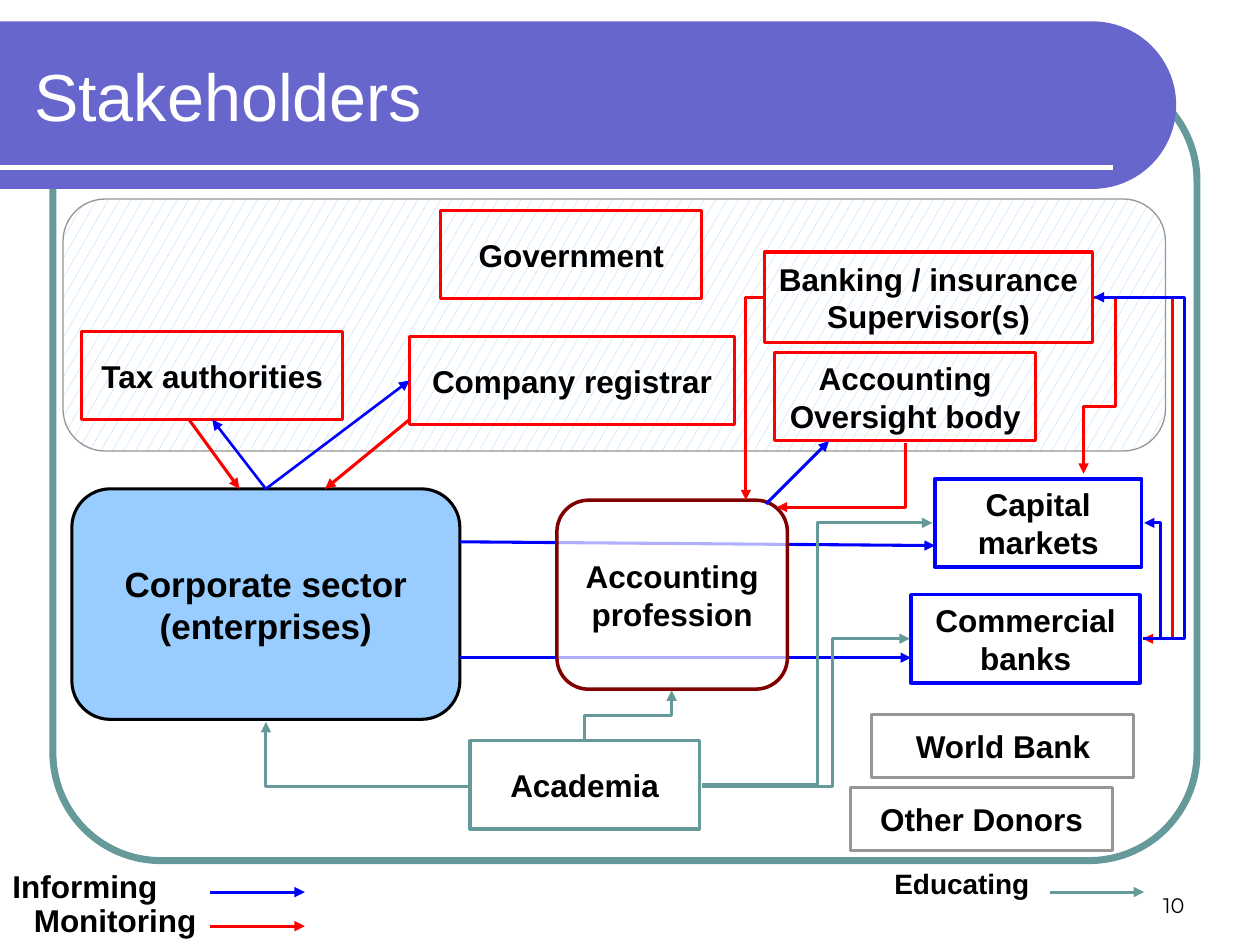
"""Build the stakeholder map slide with its informing, monitoring and educating flows."""
import math
from dataclasses import dataclass

from lxml import etree
from pptx import Presentation
from pptx import util as u
from pptx.dml.color import RGBColor
from pptx.enum import dml, shapes, text
from pptx.oxml.ns import qn

BLACK, WHITE, GREY = "000000", "FFFFFF", "969696"
PURPLE, SKY, MAROON = "6666CC", "99CCFF", "800000"
INFORM, MONITOR, EDUCATE = "0000FF", "FF0000", "669999"
RECT = shapes.MSO_SHAPE.RECTANGLE
ROUNDED = shapes.MSO_SHAPE.ROUNDED_RECTANGLE
LEFT, CENTER, RIGHT = text.PP_ALIGN.LEFT, text.PP_ALIGN.CENTER, text.PP_ALIGN.RIGHT
TOP, MIDDLE, BOTTOM = text.MSO_ANCHOR.TOP, text.MSO_ANCHOR.MIDDLE, text.MSO_ANCHOR.BOTTOM


@dataclass
class Box:
    words: str
    left: float
    top: float
    width: float
    height: float
    line: str
    weight: float = 1.75
    fill: str = ""
    size: int = 18
    preset: int = RECT
    corner: float = 0.167


@dataclass
class Flow:
    color: str
    start: tuple
    end: tuple
    weight: float = 1.75
    source: tuple = ()
    target: tuple = ()


@dataclass
class Elbow:
    color: str
    left: float
    top: float
    width: float
    height: float
    bends: int
    turn: int = 0
    flip: str = ""
    adjust: tuple = ()


@dataclass
class Label:
    words: str
    left: float
    top: float
    width: float
    height: float
    size: int = 18


def rgb(value: str) -> RGBColor:
    return RGBColor.from_string(value)


def write(frame, words: str, size: int, color: str = BLACK, bold: bool = True,
          face: str = "Arial", align=CENTER, anchor=MIDDLE, wrap: bool = False) -> None:
    frame.text = words
    frame.word_wrap = wrap
    frame.vertical_anchor = anchor
    for paragraph in frame.paragraphs:
        paragraph.alignment = align
        for name, value in {"size": u.Pt(size), "bold": bold, "name": face}.items():
            setattr(paragraph.font, name, value)
        paragraph.font.color.rgb = rgb(color)


def draw_box(canvas, box: Box):
    shape = canvas.add_shape(box.preset, *map(u.Inches, (box.left, box.top, box.width, box.height)))
    shape.shadow.inherit = False
    if box.preset == ROUNDED:
        shape.adjustments[0] = box.corner
    if box.fill:
        shape.fill.solid()
        shape.fill.fore_color.rgb = rgb(box.fill)
    else:
        shape.fill.background()
    shape.line.color.rgb = rgb(box.line)
    shape.line.width = u.Pt(box.weight)
    if box.words:
        write(shape.text_frame, box.words, box.size)
    return shape


def draw_connector(canvas, kind, start: tuple, end: tuple, color: str, weight: float, arrow: bool = True):
    connector = canvas.add_connector(kind, *map(u.Inches, (*start, *end)))
    connector.line.color.rgb = rgb(color)
    connector.line.width = u.Pt(weight)
    if arrow:
        etree.SubElement(connector.line._get_or_add_ln(), qn("a:tailEnd"), type="triangle")
    etree.SubElement(connector._element.spPr, qn("a:effectLst"))
    return connector


def draw_flow(canvas, flow: Flow, boxes: dict) -> None:
    connector = draw_connector(canvas, shapes.MSO_CONNECTOR.STRAIGHT, flow.start, flow.end,
                               flow.color, flow.weight)
    for join, site in ((connector.begin_connect, flow.source), (connector.end_connect, flow.target)):
        if site:
            join(boxes[site[0]], site[1])


def draw_elbow(canvas, elbow: Elbow) -> None:
    end = (elbow.left + elbow.width, elbow.top + elbow.height)
    connector = draw_connector(canvas, shapes.MSO_CONNECTOR.ELBOW, (elbow.left, elbow.top), end,
                               elbow.color, 1.75)
    frame = connector._element.spPr.find(qn("a:xfrm"))
    frame.set("rot", str(elbow.turn * 60000))
    for axis in elbow.flip:
        frame.set("flip" + axis, "1")
    geometry = connector._element.spPr.find(qn("a:prstGeom"))
    geometry.set("prst", f"bentConnector{elbow.bends}")
    for number, share in enumerate(elbow.adjust, 1):
        etree.SubElement(geometry.find(qn("a:avLst")), qn("a:gd"),
                         name=f"adj{number}", fmla=f"val {round(share * 100000)}")


def draw_label(canvas, label: Label, **style):
    field = canvas.add_textbox(*map(u.Inches, (label.left, label.top, label.width, label.height)))
    write(field.text_frame, label.words, label.size, **style)


def draw_banner(canvas) -> None:
    radius, middle, center = 0.665, 0.835, 8.67
    angles = [math.radians(degree) for degree in range(-90, 91, 3)]
    arc = [(u.Inches(center + radius * math.cos(a)), u.Inches(middle + radius * math.sin(a))) for a in angles]
    builder = canvas.build_freeform(0, u.Inches(middle - radius))
    builder.add_line_segments([*arc, (0, u.Inches(middle + radius))], close=True)
    banner = builder.convert_to_shape()
    banner.shadow.inherit = False
    banner.fill.solid()
    banner.fill.fore_color.rgb = rgb(PURPLE)
    banner.line.fill.background()
    draw_connector(canvas, shapes.MSO_CONNECTOR.STRAIGHT, (0, 1.33), (8.83, 1.33), WHITE, 3, arrow=False)


def draw_title(slide) -> None:
    title = slide.shapes.title
    for name, value in {"left": 0.17, "top": 0.25, "width": 8.77, "height": 1}.items():
        setattr(title, name, u.Inches(value))
    write(title.text_frame, "Stakeholders", 38, WHITE, bold=False, align=LEFT, wrap=True)
    slide.shapes._spTree.append(title._element)


FRAME = Box("", 0.42, 0.58, 9.08, 6.25, EDUCATE, 4, preset=ROUNDED, corner=0.137)
STATE = Box("", 0.5, 1.58, 8.75, 2, GREY, 0.75, preset=ROUNDED)
SECTORS = [
    Box("Government", 3.5, 1.67, 2.07, 0.7, MONITOR),
    Box("Tax authorities", 0.65, 2.63, 2.07, 0.7, MONITOR),
    Box("Company registrar", 3.25, 2.67, 2.58, 0.7, MONITOR),
    Box("Banking / insurance\nSupervisor(s)", 6.07, 2, 2.6, 0.72, MONITOR),
    Box("Commercial\nbanks", 7.23, 4.72, 1.82, 0.7, INFORM, 2),
    Box("Capital\nmarkets", 7.42, 3.8, 1.64, 0.7, INFORM, 2),
    Box("World Bank", 6.92, 5.67, 2.08, 0.5, GREY),
    Box("Other Donors", 6.75, 6.25, 2.08, 0.5, GREY),
    Box("Accounting\nOversight body", 6.15, 2.8, 2.07, 0.7, MONITOR),
    Box("Corporate sector\n(enterprises)", 0.57, 3.88, 3.08, 1.83, BLACK, fill=SKY, size=20, preset=ROUNDED),
]
PROFESSION = Box("Accounting\nprofession", 4.42, 3.97, 1.83, 1.5, MAROON, 2, WHITE, preset=ROUNDED)
ACADEMIA = Box("Academia", 3.73, 5.88, 1.82, 0.7, EDUCATE)
REPORTS = [Flow(INFORM, (3.65, 4.3), (7.42, 4.33)), Flow(INFORM, (3.65, 5.22), (7.23, 5.22))]
CORPORATE_TOP = ("Corporate sector\n(enterprises)", 0)
FLOWS = [
    Flow(INFORM, (2.11, 3.88), (1.69, 3.33), 1.5, CORPORATE_TOP, ("Tax authorities", 2)),
    Flow(INFORM, (2.11, 3.88), (3.25, 3.02), 1.5, CORPORATE_TOP, ("Company registrar", 1)),
    Flow(MONITOR, (3.25, 3.33), (2.58, 3.88)),
    Flow(MONITOR, (1.5, 3.33), (1.9, 3.88)),
    Flow(INFORM, (6.08, 4), (6.58, 3.5)),
]
ELBOWS = [
    Elbow(EDUCATE, 2.11, 5.73, 1.61, 0.51, 2, 180),
    Elbow(EDUCATE, 4.79, 5.33, 0.39, 0.69, 3, 270, adjust=(0.5,)),
    Elbow(EDUCATE, 5.57, 5.07, 1.65, 1.17, 3, flip="V", adjust=(0.63,)),
    Elbow(MONITOR, 6.42, 3.26, 0.51, 1.02, 2, 90),
    Elbow(MONITOR, 8.68, 2.36, 0.39, 2.71, 3, adjust=(1.6,)),
    Elbow(MONITOR, 5.92, 2.36, 0.14, 1.61, 2, 180, "V"),
    Elbow(MONITOR, 8.6, 2.36, 0.08, 1.4, 4, flip="H", adjust=(-2.15, 0.62)),
    Elbow(INFORM, 8.68, 2.36, 0.39, 2.71, 3, flip="HV", adjust=(-0.84,)),
    Elbow(EDUCATE, 5.57, 4.15, 1.83, 2.08, 3, flip="V", adjust=(0.5,)),
    Elbow(INFORM, 9.07, 4.15, 0.01, 0.92, 3, flip="V", adjust=(14,)),
]
LEGEND = [
    (Label("Informing", 0, 6.83, 1.35, 0.4), Flow(INFORM, (1.67, 7.08), (2.42, 7.08))),
    (Label("Monitoring", 0.17, 7.1, 1.49, 0.4), Flow(MONITOR, (1.67, 7.35), (2.42, 7.35))),
    (Label("Educating", 7, 6.83, 1.42, 0.37, 16), Flow(EDUCATE, (8.33, 7.08), (9.08, 7.08))),
]


def main() -> None:
    deck = Presentation()
    deck.slide_width, deck.slide_height = u.Inches(10), u.Inches(7.5)
    slide = deck.slides.add_slide(deck.slide_layouts[5])
    canvas = slide.shapes
    draw_box(canvas, FRAME)
    draw_banner(canvas)
    draw_label(canvas, Label("10", 7.17, 6.83, 2.33, 0.5, 12), bold=False, face="Montserrat",
               align=RIGHT, anchor=BOTTOM, wrap=True)
    state = draw_box(canvas, STATE)
    state.fill.patterned()
    state.fill.pattern = dml.MSO_PATTERN.SMALL_CONFETTI
    state.fill.fore_color.rgb, state.fill.back_color.rgb = rgb(SKY), rgb(WHITE)
    draw_title(slide)
    boxes = {box.words: draw_box(canvas, box) for box in SECTORS}
    for flow in REPORTS:
        draw_flow(canvas, flow, boxes)
    profession = draw_box(canvas, PROFESSION)
    tint = profession._element.spPr.find(qn("a:solidFill"))[0]
    etree.SubElement(tint, qn("a:alpha"), val="69000")
    draw_box(canvas, ACADEMIA)
    for elbow in ELBOWS:
        draw_elbow(canvas, elbow)
    for flow in FLOWS:
        draw_flow(canvas, flow, boxes)
    for label, flow in LEGEND:
        draw_label(canvas, label, align=LEFT, anchor=TOP)
        draw_flow(canvas, flow, boxes)
    deck.save("out.pptx")


if __name__ == "__main__":
    main()
